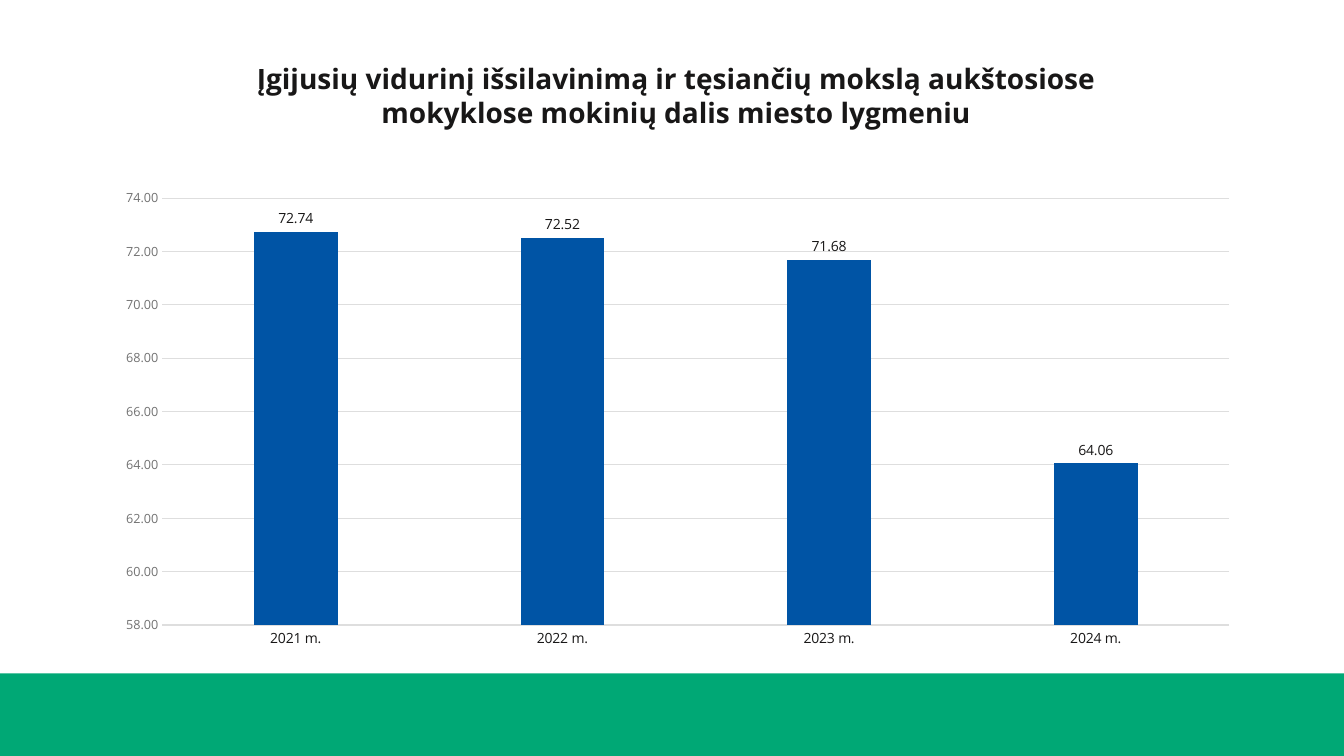
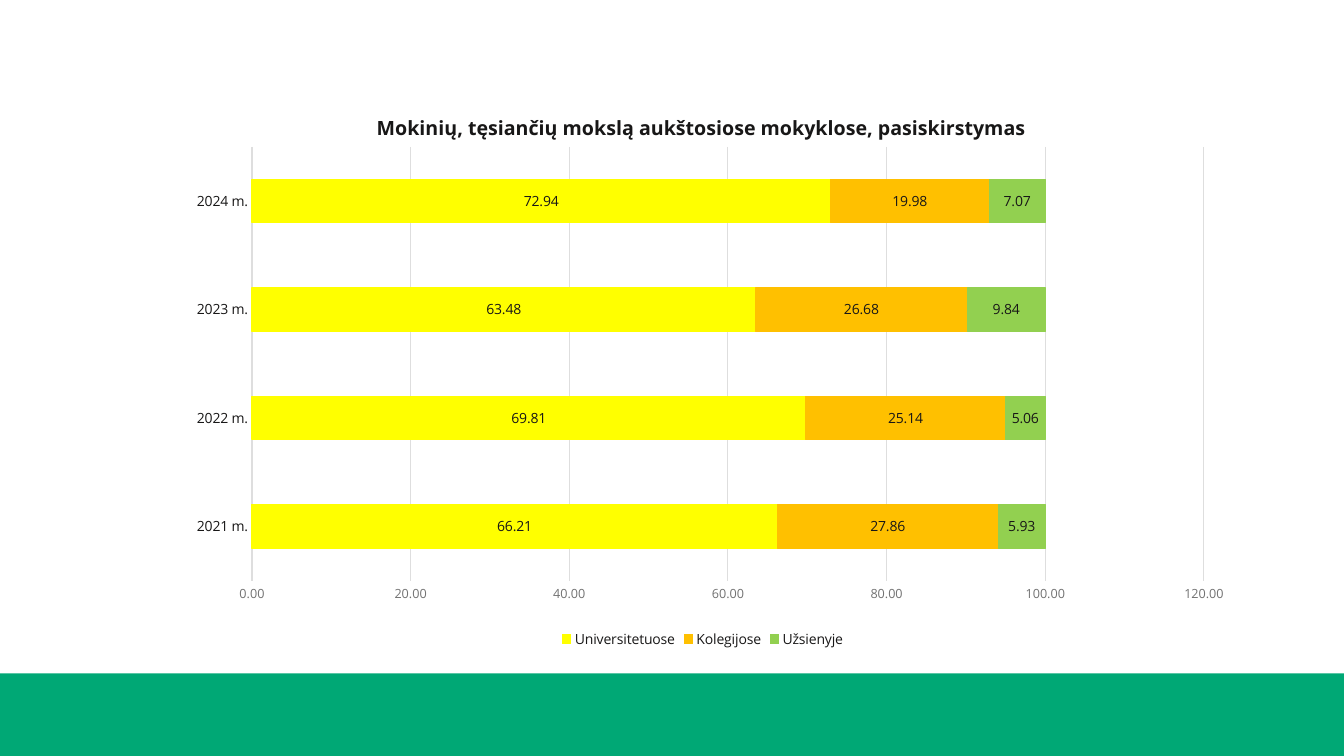
from lxml import etree
from pptx import Presentation
from pptx.chart.data import CategoryChartData
from pptx.dml.color import RGBColor
from pptx.enum.chart import (XL_CHART_TYPE, XL_LABEL_POSITION,
                             XL_LEGEND_POSITION, XL_TICK_MARK)
from pptx.enum.shapes import MSO_SHAPE
from pptx.enum.text import MSO_ANCHOR, MSO_AUTO_SIZE, PP_ALIGN
from pptx.oxml.ns import qn
from pptx.util import Pt

WIDTH, HEIGHT = 960, 540
YEARS = ["2021 m.", "2022 m.", "2023 m.", "2024 m."]


def rgb(value):
    return RGBColor.from_string(value)


def set_attrs(obj, values):
    for name, value in values.items():
        setattr(obj, name, value)


class Deck:
    FONT = "Open Sans"
    INK, BODY, MUTED = "181717", "262626", "727272"
    GRID, BAND = "DEDEDE", "00A875"
    BAND_TOP = 481
    NUMBERS = {"number_format": "0.00", "number_format_is_linked": False}

    def __init__(self):
        self.prs = Presentation()
        set_attrs(self.prs, {"slide_width": Pt(WIDTH), "slide_height": Pt(HEIGHT)})
        self.s = None

    def style(self, font, size, color, bold=False):
        set_attrs(font, {"name": self.FONT, "size": Pt(size), "bold": bold})
        font.color.rgb = rgb(color)

    def line(self, fmt, color):
        fmt.line.color.rgb = rgb(color)
        fmt.line.width = Pt(0.75)

    def slide(self):
        self.s = self.prs.slides.add_slide(self.prs.slide_layouts[5])
        self.band()

    def band(self):
        sp = self.s.shapes.add_shape(MSO_SHAPE.RECTANGLE, Pt(0), Pt(self.BAND_TOP),
                                     Pt(WIDTH), Pt(HEIGHT - self.BAND_TOP))
        sp.shadow.inherit = False
        sp.fill.solid()
        sp.fill.fore_color.rgb = rgb(self.BAND)
        sp.line.fill.background()

    def title(self, text, box, size):
        sp = self.s.shapes.title
        set_attrs(sp, dict(zip(("left", "top", "width", "height"), map(Pt, box))))
        tf = sp.text_frame
        set_attrs(tf, {"word_wrap": True, "auto_size": MSO_AUTO_SIZE.NONE,
                       "vertical_anchor": MSO_ANCHOR.MIDDLE,
                       "margin_left": 0, "margin_right": 0,
                       "margin_top": 0, "margin_bottom": 0})
        p = tf.paragraphs[0]
        p.alignment = PP_ALIGN.CENTER
        r = p.add_run()
        r.text = text
        self.style(r.font, size, self.INK, bold=True)

    def chart(self, kind, series, box, plot_box, scale, bars, label_position):
        """series: (name, colour, values); box and plot_box: left, top, width, height."""
        data = CategoryChartData(number_format="0.00")
        data.categories = YEARS
        for name, _, values in series:
            data.add_series(name, values)
        chart = self.s.shapes.add_chart(kind, *map(Pt, box), data).chart
        set_attrs(chart, {"has_title": False, "has_legend": len(series) > 1})
        self.style(chart.font, 10, self.BODY)
        self.axes(chart, scale)
        self.place_plot(chart, box, plot_box)

        # Bars and their values
        plot = chart.plots[0]
        set_attrs(plot, {"vary_by_categories": False, **bars})
        for ser, (_, color, _) in zip(plot.series, series):
            ser.format.fill.solid()
            ser.format.fill.fore_color.rgb = rgb(color)
            if len(series) > 1:
                self.line(ser.format, color)
            labels = ser.data_labels
            set_attrs(labels, {"show_value": True, "position": label_position,
                               **self.NUMBERS})
            self.style(labels.font, 10, self.INK)

        if chart.has_legend:
            set_attrs(chart.legend, {"position": XL_LEGEND_POSITION.BOTTOM,
                                     "include_in_layout": False})
            self.style(chart.legend.font, 10, self.INK)

    def axes(self, chart, scale):
        cat, val = chart.category_axis, chart.value_axis
        for axis, size, color in ((cat, 10, self.INK), (val, 9, self.MUTED)):
            set_attrs(axis, {"major_tick_mark": XL_TICK_MARK.NONE,
                             "minor_tick_mark": XL_TICK_MARK.NONE})
            self.style(axis.tick_labels.font, size, color)
        self.line(cat.format, self.GRID)
        val.format.line.fill.background()
        set_attrs(val, {"has_major_gridlines": True, **scale})
        self.line(val.major_gridlines.format, self.GRID)
        set_attrs(val.tick_labels, self.NUMBERS)

    def place_plot(self, chart, box, plot_box):
        left, top, width, height = box
        x, y, w, h = plot_box
        area = chart._chartSpace.find(".//" + qn("c:plotArea"))
        for old in area.findall(qn("c:layout")):
            area.remove(old)
        layout = etree.Element(qn("c:layout"))
        manual = etree.SubElement(layout, qn("c:manualLayout"))
        for tag, value in (("layoutTarget", "inner"), ("xMode", "edge"), ("yMode", "edge"),
                           ("x", (x - left) / width), ("y", (y - top) / height),
                           ("w", w / width), ("h", h / height)):
            etree.SubElement(manual, qn("c:" + tag)).set("val", str(value))
        area.insert(0, layout)


def main():
    deck = Deck()

    # Share of pupils continuing their studies
    deck.slide()
    deck.title("Įgijusių vidurinį išsilavinimą ir tęsiančių mokslą aukštosiose "
               "mokyklose mokinių dalis miesto lygmeniu", (153, 36, 660, 64), 20)
    deck.chart(XL_CHART_TYPE.COLUMN_CLUSTERED,
               [("Series 1", "0054A5", (72.74, 72.52, 71.68, 64.06))],
               box=(73, 110, 821, 361), plot_box=(116, 141.5, 762, 305),
               scale={"minimum_scale": 58, "maximum_scale": 74, "major_unit": 2},
               bars={"gap_width": 219, "overlap": -27},
               label_position=XL_LABEL_POSITION.OUTSIDE_END)

    # Where they study
    deck.slide()
    deck.title("Mokinių, tęsiančių mokslą aukštosiose mokyklose, pasiskirstymas",
               (221, 78, 560, 26), 14)
    deck.chart(XL_CHART_TYPE.BAR_STACKED,
               [("Universitetuose", "FFFF00", (66.21, 69.81, 63.48, 72.94)),
                ("Kolegijose", "FFC000", (27.86, 25.14, 26.68, 19.98)),
                ("Užsienyje", "92D050", (5.93, 5.06, 9.84, 7.07))],
               box=(121, 104, 762, 362), plot_box=(180, 105, 680, 310),
               scale={"minimum_scale": 0, "maximum_scale": 120, "major_unit": 20},
               bars={"gap_width": 150, "overlap": 100},
               label_position=XL_LABEL_POSITION.CENTER)

    deck.prs.save("out.pptx")


if __name__ == "__main__":
    main()
